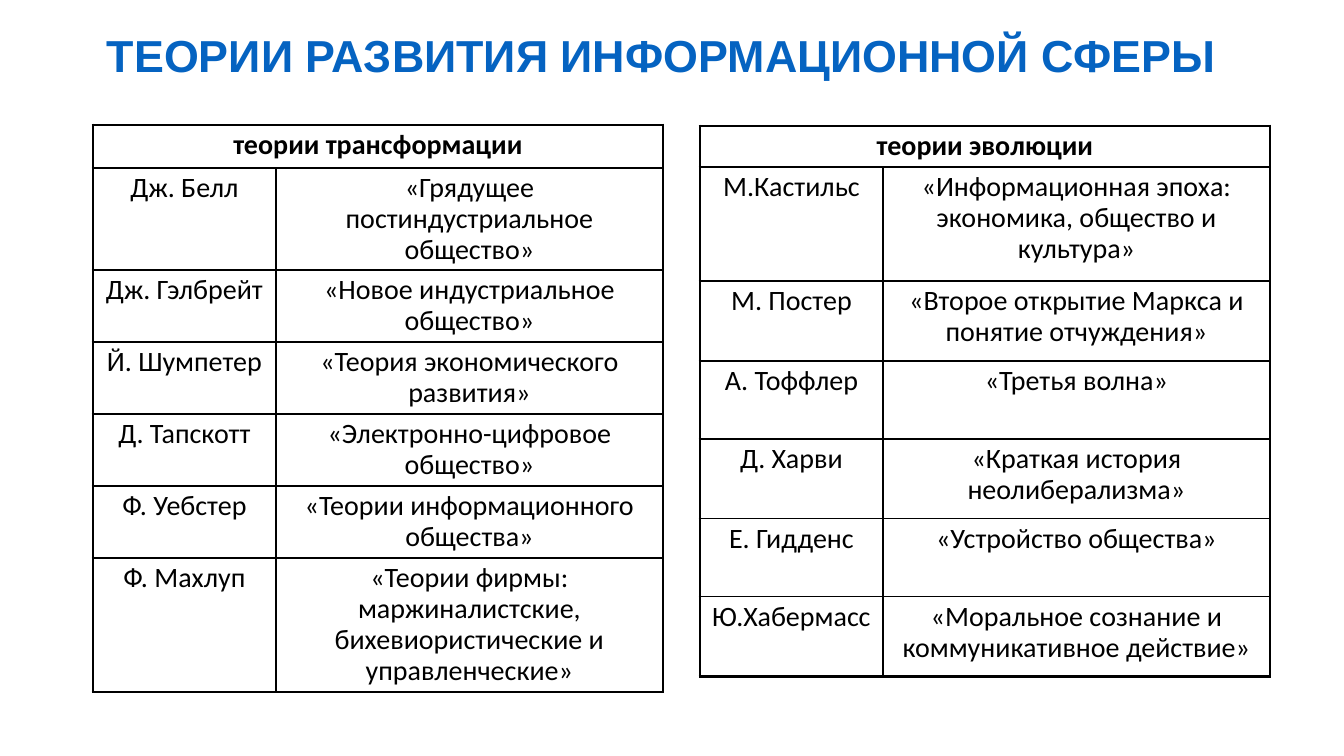
import lxml.etree
import pptx
import pptx.dml.color
import pptx.enum.text
import pptx.oxml.ns
import pptx.util

BLUE = pptx.dml.color.RGBColor(0x05, 0x63, 0xC1)
BLACK = pptx.dml.color.RGBColor(0x00, 0x00, 0x00)
WHITE = pptx.dml.color.RGBColor(0xFF, 0xFF, 0xFF)
OUTER_LINE, INNER_LINE = 2.25, 1
COLUMN_WIDTHS = (183, 387)

TRANSFORMATION = [
    ("Дж. Белл", "«Грядущее постиндустриальное общество»"),
    ("Дж. Гэлбрейт", "«Новое индустриальное общество»"),
    ("Й. Шумпетер", "«Теория экономического развития»"),
    ("Д. Тапскотт", "«Электронно-цифровое общество»"),
    ("Ф. Уебстер", "«Теории информационного общества»"),
    ("Ф. Махлуп", "«Теории фирмы: маржиналистские, бихевиористические и управленческие»"),
]
EVOLUTION = [
    ("М.Кастильс", "«Информационная эпоха: экономика, общество и культура»"),
    ("М. Постер", "«Второе открытие Маркса и понятие отчуждения»"),
    ("А. Тоффлер", "«Третья волна»"),
    ("Д. Харви", "«Краткая история неолиберализма»"),
    ("Е. Гидденс", "«Устройство общества»"),
    ("Ю.Хабермасс", "«Моральное сознание и коммуникативное действие»"),
]


def px(length):
    return pptx.util.Emu(round(length * 914400 / 100.8))


class TheorySlide:
    title_font, table_font = "Arial", "Calibri"
    title_size, table_size = 32, 20

    def __init__(self, presentation):
        self.slide = presentation.slides.add_slide(presentation.slide_layouts[6])

    def style(self, paragraph, font, size, color, bold, align):
        paragraph.alignment = align
        paragraph.line_spacing = 0.9
        paragraph.font.name = font
        paragraph.font.size = pptx.util.Pt(size)
        paragraph.font.bold = bold
        paragraph.font.color.rgb = color

    def title(self, text, left, top, width, height):
        frame = self.slide.shapes.add_textbox(px(left), px(top), px(width), px(height)).text_frame
        frame.word_wrap = True
        frame.vertical_anchor = pptx.enum.text.MSO_ANCHOR.MIDDLE
        frame.text = text
        self.style(frame.paragraphs[0], self.title_font, self.title_size, BLUE, True,
                   pptx.enum.text.PP_ALIGN.LEFT)

    def border(self, cell, side, width):
        qn = pptx.oxml.ns.qn
        line = lxml.etree.SubElement(cell._tc.get_or_add_tcPr(), qn(f"a:ln{side}"),
                                     w=str(pptx.util.Pt(width)))
        fill = lxml.etree.SubElement(line, qn("a:solidFill"))
        lxml.etree.SubElement(fill, qn("a:srgbClr"), val=str(BLACK))

    def theories(self, heading, works, left, top, row_heights):
        row_count, column_count = len(works) + 1, len(COLUMN_WIDTHS)
        table = self.slide.shapes.add_table(
            row_count, column_count, px(left), px(top),
            px(sum(COLUMN_WIDTHS)), px(sum(row_heights))).table
        table.first_row = table.horz_banding = False
        for column, width in zip(table.columns, COLUMN_WIDTHS):
            column.width = px(width)
        for row, height in zip(table.rows, row_heights):
            row.height = px(height)
        table.cell(0, 0).merge(table.cell(0, column_count - 1))

        for r, entries in enumerate([(heading, ""), *works]):
            for c, entry in enumerate(entries):
                cell = table.cell(r, c)
                edges = {"L": c == 0, "R": c == column_count - 1 or r == 0,
                         "T": r == 0, "B": r == row_count - 1}
                for side, is_outer in edges.items():
                    self.border(cell, side, OUTER_LINE if is_outer else INNER_LINE)
                cell.fill.solid()
                cell.fill.fore_color.rgb = WHITE
                if entry:
                    cell.text = entry
                    self.style(cell.text_frame.paragraphs[0], self.table_font, self.table_size,
                               BLACK, r == 0, pptx.enum.text.PP_ALIGN.CENTER)


def main():
    presentation = pptx.Presentation()
    presentation.slide_width, presentation.slide_height = px(1344), px(756)
    slide = TheorySlide(presentation)
    slide.title("ТЕОРИИ РАЗВИТИЯ ИНФОРМАЦИОННОЙ СФЕРЫ", 97, 37, 1159, 42)
    slide.theories("теории трансформации", TRANSFORMATION, 93, 125,
                   (43, 102, 72, 72, 72, 72, 134))
    slide.theories("теории эволюции", EVOLUTION, 700, 126,
                   (41, 114, 80, 78, 80, 78, 80))
    presentation.save("out.pptx")


if __name__ == "__main__":
    main()
